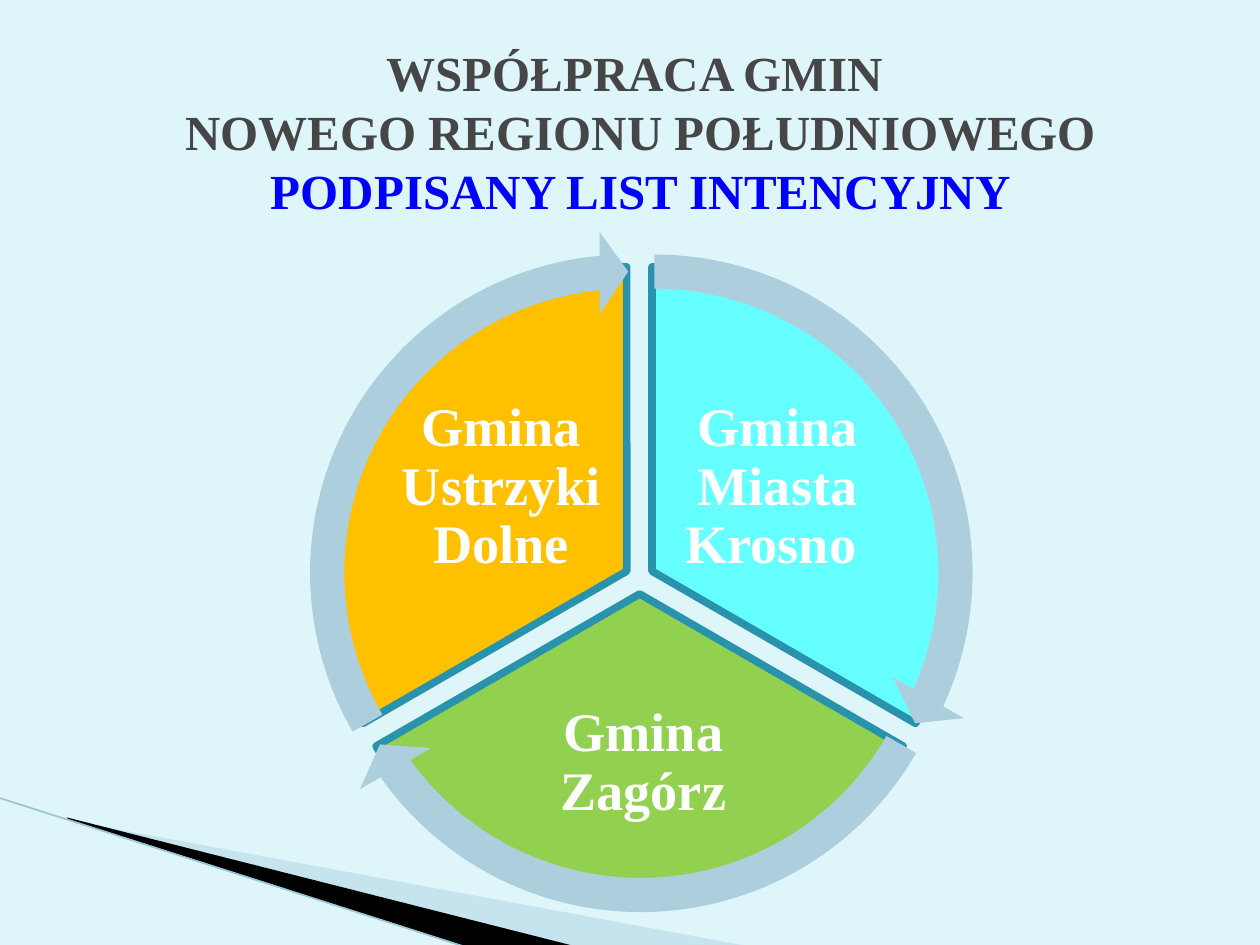
from lxml.etree import SubElement
from pptx import Presentation
from pptx.dml.color import RGBColor
from pptx.enum.shapes import MSO_CONNECTOR, MSO_SHAPE
from pptx.enum.text import MSO_ANCHOR, MSO_AUTO_SIZE, PP_ALIGN
from pptx.oxml.ns import qn
from pptx.util import Cm, Pt

FONT = "Times New Roman"
PALE_BLUE = RGBColor(0xDE, 0xF5, 0xFA)
WAVE_BLUE = RGBColor(0xA0, 0xCB, 0xDC)
EDGE_BLUE = RGBColor(0x97, 0xC5, 0xD8)
ARROW_BLUE = RGBColor(0xAD, 0xCE, 0xDC)
TEAL = RGBColor(0x29, 0x93, 0xAD)
CYAN = RGBColor(0x66, 0xFF, 0xFF)
GREEN = RGBColor(0x92, 0xD0, 0x50)
AMBER = RGBColor(0xFF, 0xC0, 0x00)
GREY = RGBColor(0x46, 0x46, 0x46)
BLUE = RGBColor(0x00, 0x00, 0xFF)
BLACK = RGBColor(0x00, 0x00, 0x00)
WHITE = RGBColor(0xFF, 0xFF, 0xFF)


def add_bold_run(paragraph, text, size, color):
    run = paragraph.add_run()
    run.text = text
    run.font.name = FONT
    run.font.size = Pt(size)
    run.font.bold = True
    run.font.color.rgb = color


def paint(shape, color):
    """Give the shape a solid fill, no outline and no shadow."""
    shape.shadow.inherit = False
    shape.fill.solid()
    shape.fill.fore_color.rgb = color
    shape.line.fill.background()


prs = Presentation()
prs.slide_width, prs.slide_height = Cm(25.4), Cm(19.05)
slide = prs.slides.add_slide(prs.slide_layouts[5])
slide.background.fill.solid()
slide.background.fill.fore_color.rgb = PALE_BLUE

# Corner decoration
wedges = [
    (WAVE_BLUE, 40, [(1.4, 16.54), (15.11, 19.08), (11.58, 19.08), (1.4, 16.51)]),
    (BLACK, 100, [(1.35, 16.48), (11.61, 19.08), (9.45, 19.1), (1.37, 16.51)]),
]
for color, opacity, corners in wedges:
    points = [(Cm(x), Cm(y)) for x, y in corners]
    outline = slide.shapes.build_freeform(*points[0])
    outline.add_line_segments(points[1:], close=True)
    wedge = outline.convert_to_shape()
    paint(wedge, color)
    if opacity < 100:
        rgb = wedge.fill._xPr.find(qn("a:solidFill")).find(qn("a:srgbClr"))
        SubElement(rgb, qn("a:alpha"), val=str(opacity * 1000))

edge = slide.shapes.add_connector(
    MSO_CONNECTOR.STRAIGHT, Cm(-0.03), Cm(16.08), Cm(9.42), Cm(19.1))
edge.line.color.rgb = EDGE_BLUE
edge.line.width = Pt(0.95)
SubElement(edge._element.spPr, qn("a:effectLst"))

# Title
title = slide.shapes.title
title.left, title.top, title.width, title.height = Cm(2.31), Cm(0.76), Cm(21.21), Cm(3.76)
heading = title.text_frame
heading.auto_size = MSO_AUTO_SIZE.NONE
heading.vertical_anchor = MSO_ANCHOR.MIDDLE
heading_lines = heading.paragraphs[0]
heading_lines.alignment = PP_ALIGN.CENTER
for line in ("WSPÓŁPRACA GMIN ", "NOWEGO REGIONU POŁUDNIOWEGO"):
    add_bold_run(heading_lines, line, 28, GREY)
    heading_lines.add_line_break()
add_bold_run(heading_lines, "PODPISANY LIST INTENCYJNY", 28, BLUE)

# Sectors: colour, left, top, angles, label lines, label box
PIE_SIZE = Cm(12.27)
sectors = [
    (CYAN, 7.01, 5.38, (162, 18), ["Gmina", "Miasta Krosno "], (13.49, 8, 4.37, 3.66)),
    (GREEN, 6.76, 5.84, (18, 90), ["Gmina Zagórz"], (9.68, 13.79, 6.58, 3.2)),
    (AMBER, 6.5, 5.38, (90, 162), ["Gmina Ustrzyki Dolne"], (7.92, 8, 4.37, 3.66)),
]
for color, left, top, angles, label_lines, label_box in sectors:
    sector = slide.shapes.add_shape(MSO_SHAPE.PIE, Cm(left), Cm(top), PIE_SIZE, PIE_SIZE)
    sector.adjustments[0], sector.adjustments[1] = angles
    paint(sector, color)
    sector.line.color.rgb = TEAL
    sector.line.width = Pt(4.33)

    label = slide.shapes.add_textbox(*(Cm(length) for length in label_box)).text_frame
    label.word_wrap = True
    label.vertical_anchor = MSO_ANCHOR.MIDDLE
    label.margin_left = label.margin_right = Cm(0.1)
    label.margin_top = label.margin_bottom = Cm(0.1)
    commune = label.paragraphs[0]
    commune.alignment = PP_ALIGN.CENTER
    commune.line_spacing = 0.9
    for index, line in enumerate(label_lines):
        if index:
            commune.add_line_break()
        add_bold_run(commune, line, 31, WHITE)

# Arrows around the sectors: left, top, end angle, start angle
ARROW_SIZE = Cm(13.79)
arrows = [
    (6.3, 4.65, 14.73, 161.99),
    (6.02, 5.08, 86.72, 18),
    (5.77, 4.65, 158.73, 90),
]
for left, top, end, start in arrows:
    arrow = slide.shapes.add_shape(
        MSO_SHAPE.CIRCULAR_ARROW, Cm(left), Cm(top), ARROW_SIZE, ARROW_SIZE)
    for index, value in enumerate((0.05, 3.28, end, start, 0.06)):
        arrow.adjustments[index] = value
    paint(arrow, ARROW_BLUE)

prs.save("out.pptx")
